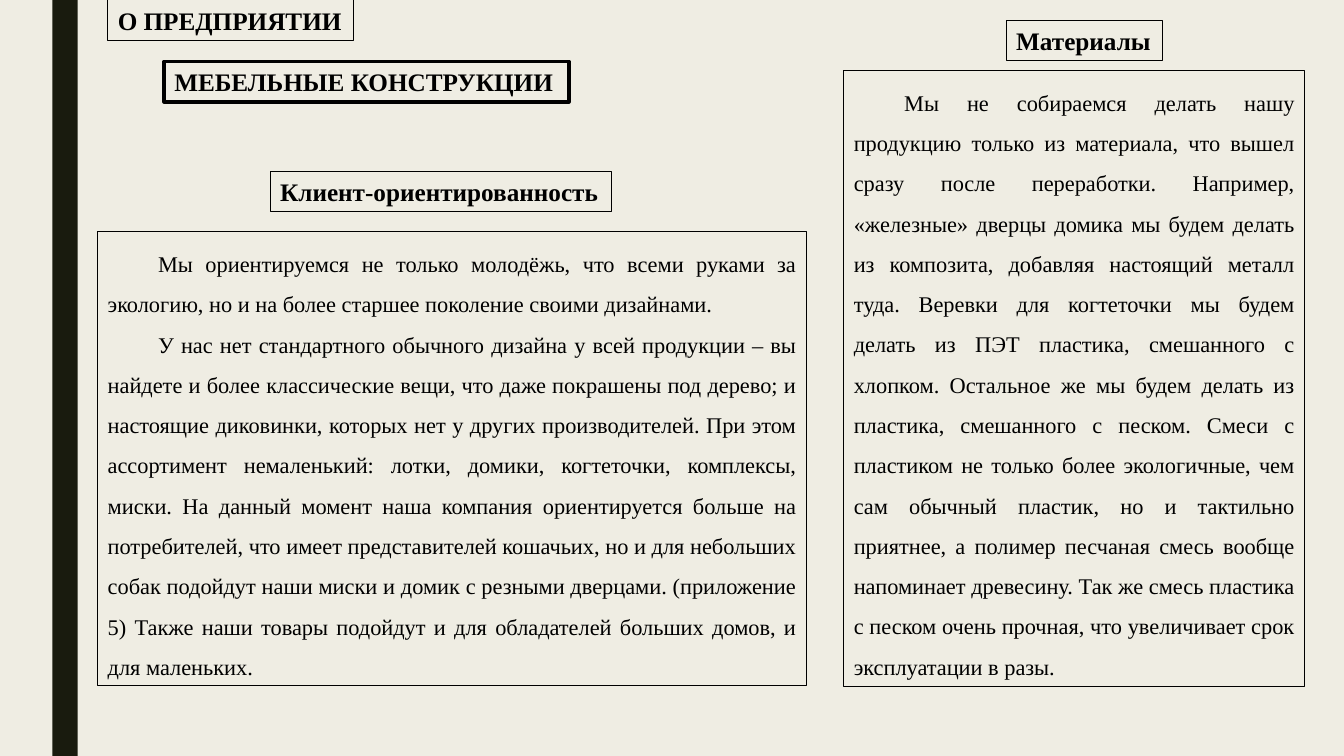
import pptx
import pptx.util
import pptx.dml.color
import pptx.enum.shapes
import pptx.enum.text

Inches = pptx.util.Inches
Pt = pptx.util.Pt
RGBColor = pptx.dml.color.RGBColor

BLACK = RGBColor(0x00, 0x00, 0x00)
CREAM = RGBColor(0xEF, 0xED, 0xE3)
DARK_OLIVE = RGBColor(0x19, 0x1B, 0x0E)
FONT = "Times New Roman"
HEADING_HEIGHT = 0.4
FIRST_LINE_INDENT = 0.5

HEADINGS = [
    ("О ПРЕДПРИЯТИИ", 1.07, 0, 2.44, 0.75, False),
    ("МЕБЕЛЬНЫЕ КОНСТРУКЦИИ", 1.63, 0.61, 4.01, 2.75, True),
    ("Материалы", 9.98, 0.2, 1.55, 0.75, True),
    ("Клиент-ориентированность", 2.68, 1.7, 3.39, 0.75, True),
]

BODIES = [
    ([
        "Мы не собираемся делать нашу продукцию только из материала, что вышел "
        "сразу после переработки. Например, «железные» дверцы домика мы будем делать "
        "из композита, добавляя настоящий металл туда. Веревки для когтеточки мы будем "
        "делать из ПЭТ пластика, смешанного с хлопком. Остальное же мы будем делать из "
        "пластика, смешанного с песком. Смеси с пластиком не только более экологичные, чем "
        "сам обычный пластик, но и тактильно приятнее, а полимер песчаная смесь вообще "
        "напоминает древесину. Так же смесь пластика с песком очень прочная, что "
        "увеличивает срок эксплуатации в разы.",
    ], (8.37, 0.7, 4.57, 6.11)),
    ([
        "Мы ориентируемся не только молодёжь, что всеми руками за экологию, но и на более "
        "старшее поколение своими дизайнами.",
        "У нас нет стандартного обычного дизайна у всей продукции – вы найдете и более "
        "классические вещи, что даже покрашены под дерево; и настоящие диковинки, которых "
        "нет у других производителей. При этом ассортимент немаленький: лотки, домики, "
        "когтеточки, комплексы, миски. На данный момент наша компания ориентируется больше "
        "на потребителей, что имеет представителей кошачьих, но и для небольших собак "
        "подойдут наши миски и домик с резными дверцами. (приложение 5) Также наши товары "
        "подойдут и для обладателей больших домов, и для маленьких.",
    ], (0.97, 2.3, 7.03, 4.5)),
]


def add_framed_text(page, texts, place, size, bold=False, line_width=0.75, wrap=True):
    box = page.shapes.add_textbox(*map(Inches, place))
    box.line.color.rgb = BLACK
    box.line.width = Pt(line_width)
    frame = box.text_frame
    frame.word_wrap = wrap
    frame.auto_size = pptx.enum.text.MSO_AUTO_SIZE.SHAPE_TO_FIT_TEXT
    frame.text = "\n".join(texts)
    for para in frame.paragraphs:
        para.font.name = FONT
        para.font.size = Pt(size)
        para.font.bold = bold
        para.font.color.rgb = BLACK
    return box


def justify_paragraphs(box):
    for para in box.text_frame.paragraphs:
        para.alignment = pptx.enum.text.PP_ALIGN.JUSTIFY
        para.line_spacing = 1.5
        properties = para._p.get_or_add_pPr()
        properties.set("marL", "0")
        properties.set("indent", str(Inches(FIRST_LINE_INDENT)))


def main():
    deck = pptx.Presentation()
    deck.slide_width = Inches(13.33)
    deck.slide_height = Inches(7.5)
    page = deck.slides.add_slide(deck.slide_layouts[6])
    page.background.fill.solid()
    page.background.fill.fore_color.rgb = CREAM

    stripe = page.shapes.add_shape(
        pptx.enum.shapes.MSO_SHAPE.RECTANGLE,
        Inches(0.52), 0, Inches(0.25), deck.slide_height)
    stripe.shadow.inherit = False
    stripe.fill.solid()
    stripe.fill.fore_color.rgb = DARK_OLIVE
    stripe.line.fill.background()

    for text, left, top, width, line_width, wrap in HEADINGS:
        place = (left, top, width, HEADING_HEIGHT)
        add_framed_text(page, [text], place, 18, True, line_width, wrap)
    for texts, place in BODIES:
        justify_paragraphs(add_framed_text(page, texts, place, 16))

    deck.save("out.pptx")


if __name__ == "__main__":
    main()
